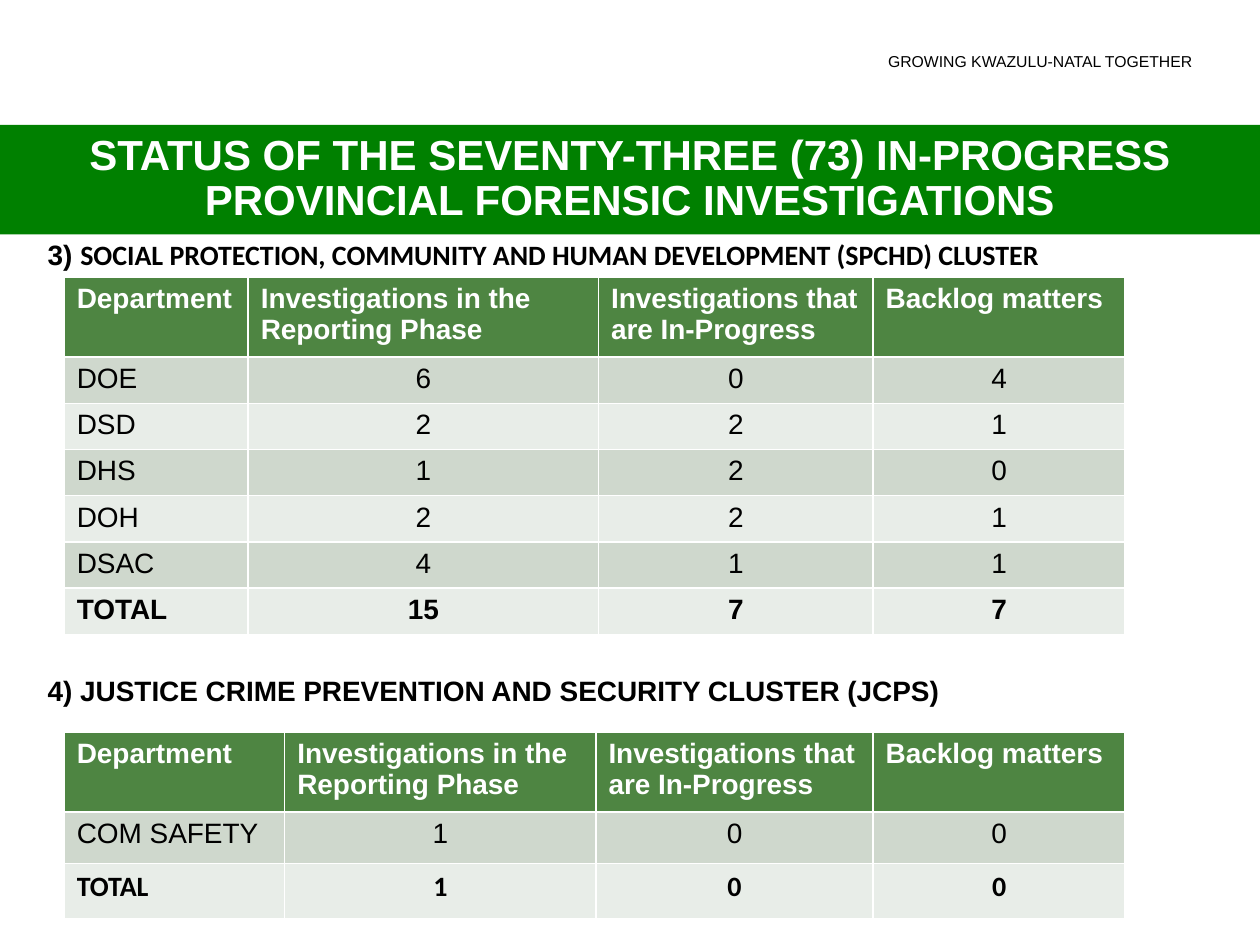
from pptx import Presentation
from pptx.dml.color import RGBColor
from pptx.enum.text import MSO_ANCHOR, PP_ALIGN
from pptx.util import Inches, Pt

LEFT, CENTER = PP_ALIGN.LEFT, PP_ALIGN.CENTER
MIDDLE, TOP = MSO_ANCHOR.MIDDLE, MSO_ANCHOR.TOP
TITLE_ONLY = 5

COLORS = {
    "banner": "008000",
    "header": "4E8542",
    "odd_row": "CFD8CD",
    "even_row": "E8EDE8",
    "white": "FFFFFF",
    "black": "000000",
}
HEADER = [
    "Department",
    "Investigations in the Reporting Phase",
    "Investigations that are In-Progress",
    "Backlog matters",
]
SOCIAL_ROWS = [
    ("DOE", 6, 0, 4),
    ("DSD", 2, 2, 1),
    ("DHS", 1, 2, 0),
    ("DOH", 2, 2, 1),
    ("DSAC", 4, 1, 1),
    ("TOTAL", 15, 7, 7),
]
JUSTICE_ROWS = [("COM SAFETY", 1, 0, 0), ("TOTAL", 1, 0, 0)]


def color(name):
    return RGBColor.from_string(COLORS[name])


def format_font(font, size, color_name="black", bold=False, name="Arial"):
    font.name = name
    font.size = Pt(size)
    font.bold = bold
    font.color.rgb = color(color_name)


def add_text_box(slide, left, top, width, height):
    shape = slide.shapes.add_textbox(
        Inches(left), Inches(top), Inches(width), Inches(height))
    shape.text_frame.word_wrap = True
    return shape.text_frame.paragraphs[0]


def add_slogan(slide, left, top, width, height):
    paragraph = add_text_box(slide, left, top, width, height)
    paragraph.text = "GROWING KWAZULU-NATAL TOGETHER"
    format_font(paragraph.font, 9)


def add_banner(slide, left, top, width, height):
    title = slide.shapes.title
    title.left, title.top = Inches(left), Inches(top)
    title.width, title.height = Inches(width), Inches(height)
    title.fill.solid()
    title.fill.fore_color.rgb = color("banner")
    title.text_frame.vertical_anchor = MIDDLE
    title.text_frame.word_wrap = True
    paragraph = title.text_frame.paragraphs[0]
    paragraph.text = ("STATUS OF THE SEVENTY-THREE (73) IN-PROGRESS "
                      "PROVINCIAL FORENSIC INVESTIGATIONS")
    paragraph.alignment = CENTER
    paragraph.line_spacing = 0.9
    format_font(paragraph.font, 24, "white", bold=True)


def add_heading(slide, left, top, number, text, font_name):
    paragraph = add_text_box(slide, left, top, 9.45, 0.36)
    for part, name in ((number + " ", "Arial"), (text, font_name)):
        run = paragraph.add_run()
        run.text = part
        format_font(run.font, 16, bold=True, name=name)


def add_table(slide, left, top, column_widths, row_heights, rows, total_font):
    frame = slide.shapes.add_table(
        len(rows) + 1, len(HEADER), Inches(left), Inches(top),
        Inches(sum(column_widths)), Inches(sum(row_heights)))
    table = frame.table
    for column, width in zip(table.columns, column_widths):
        column.width = Inches(width)
    for row, height in zip(table.rows, row_heights):
        row.height = Inches(height)

    for row_index, values in enumerate([HEADER, *rows]):
        is_header = row_index == 0
        is_total = row_index == len(rows)
        fill_name = ("header" if is_header
                     else "odd_row" if row_index % 2 else "even_row")
        for column_index, value in enumerate(values):
            cell = table.cell(row_index, column_index)
            cell.fill.solid()
            cell.fill.fore_color.rgb = color(fill_name)
            cell.vertical_anchor = TOP
            paragraph = cell.text_frame.paragraphs[0]
            paragraph.text = str(value)
            paragraph.alignment = LEFT if is_header or column_index == 0 else CENTER
            format_font(paragraph.font, 16, "white" if is_header else "black",
                        bold=is_header or is_total,
                        name=total_font if is_total else "Arial")


def add_social_cluster(slide, left, top):
    add_heading(slide, left, top, "3)",
                "SOCIAL PROTECTION, COMMUNITY AND HUMAN DEVELOPMENT (SPCHD) CLUSTER",
                "Calibri")
    add_table(slide, left + 0.23, top + 0.36, [1.46, 2.78, 2.18, 2],
              [0.58] + [0.35] * len(SOCIAL_ROWS), SOCIAL_ROWS, "Arial")


def add_justice_cluster(slide, left, top):
    add_heading(slide, left, top, "4)",
                "JUSTICE CRIME PREVENTION AND SECURITY CLUSTER (JCPS)", "Arial")
    add_table(slide, left + 0.23, top + 0.51, [1.75, 2.47, 2.2, 2],
              [0.58, 0.41, 0.44], JUSTICE_ROWS, "Calibri")


def main():
    presentation = Presentation()
    presentation.slide_width = Inches(10)
    presentation.slide_height = Inches(7.5)
    slide = presentation.slides.add_slide(presentation.slide_layouts[TITLE_ONLY])

    # Page top
    add_slogan(slide, 6.95, 0.36, 3.01, 0.25)
    add_banner(slide, 0, 0.99, 10, 0.87)

    # Clusters, each a heading above its table
    add_social_cluster(slide, 0.28, 1.84)
    add_justice_cluster(slide, 0.28, 5.3)

    presentation.save("out.pptx")


if __name__ == "__main__":
    main()
